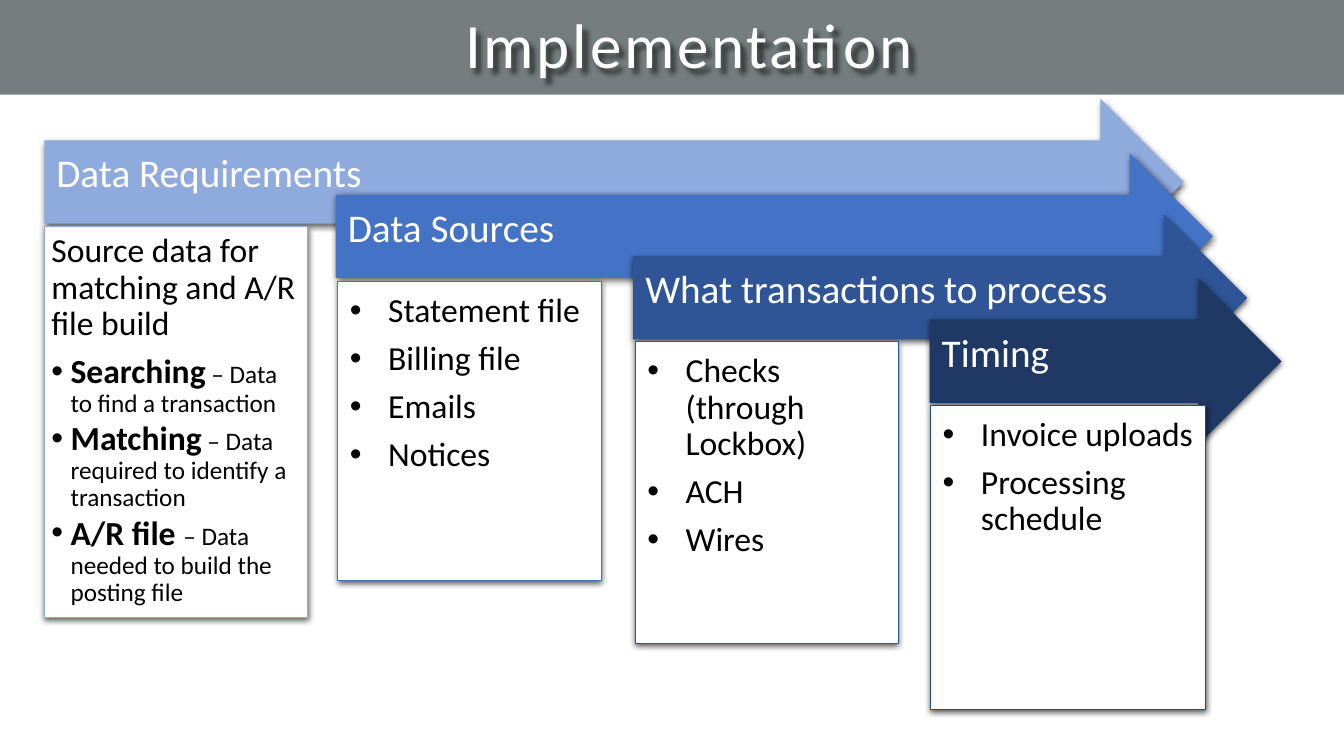
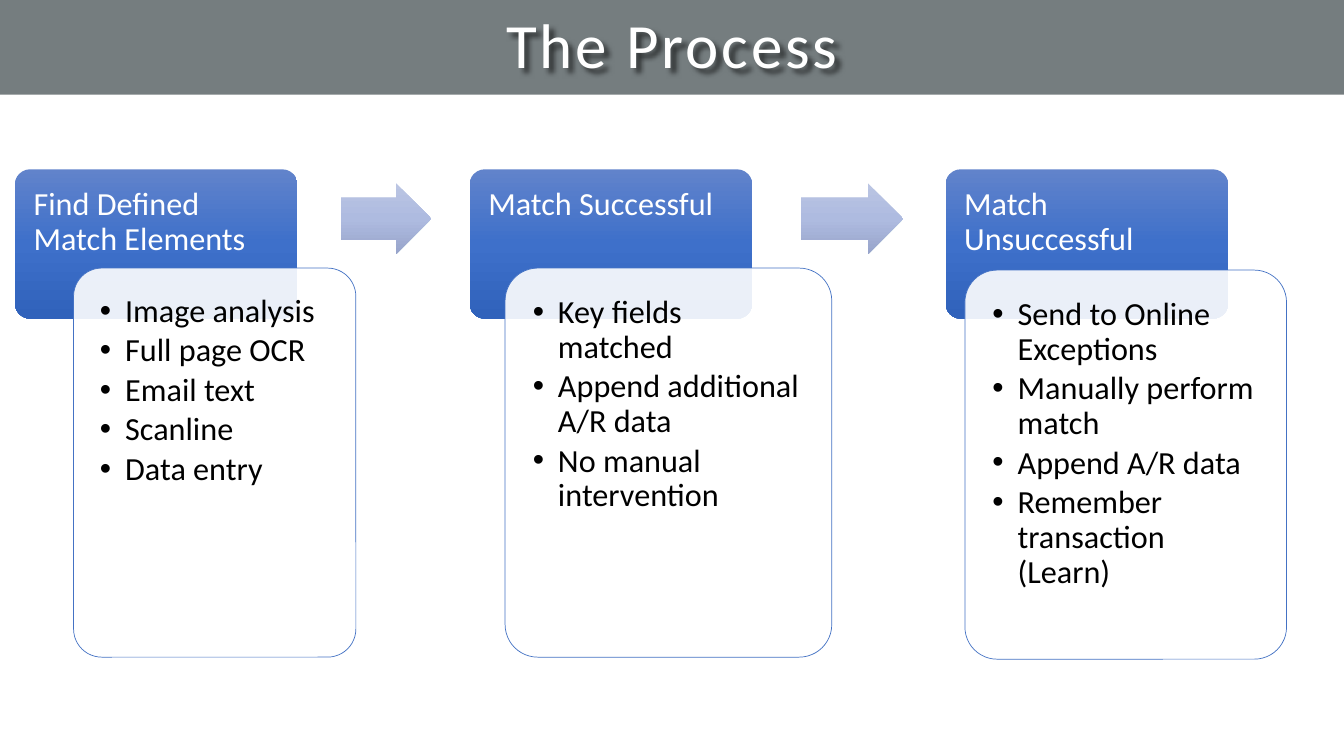
from copy import deepcopy

from lxml.etree import SubElement
from pptx import Presentation
from pptx.dml.color import RGBColor
from pptx.enum.shapes import MSO_SHAPE as SHAPE
from pptx.enum.text import MSO_ANCHOR as ANCHOR, MSO_AUTO_SIZE as AUTO_SIZE, PP_ALIGN as ALIGN
from pptx.oxml.ns import qn
from pptx.util import Pt

PX = 9144  # 100 px to the inch
FONT = "Calibri"
WIDTH, HEIGHT = 1333, 750
COLORS = {
    "band": "757D7F", "white": "FFFFFF", "black": "000000",
    "light": "8FAADC", "blue": "4472C4", "deep": "2F5597",
    "navy": "203864", "navy line": "1F4E79",
}
STEP_GRADIENT = ["6183CB", "3E70CA", "3062BB"]
ARROW_GRADIENT = ["BBC5E3", "AEBBE0", "98A4CB"]
BOX_SHADOW = {"blur": 4.5, "dist": 1.5, "angle": 90, "alpha": 63}
TITLE_SHADOW = {"blur": 4, "dist": 4, "angle": 45, "alpha": 60}


def add_box(slide, kind, box, fill, line=None, shadow=None):
    """Add a preset shape; a list as fill makes a vertical gradient."""
    shape = slide.shapes.add_shape(kind, *[n * PX for n in box])
    if isinstance(fill, list):
        shape.fill.gradient()
        shape.fill.gradient_angle = 270
        stops = shape._element.spPr.find(".//" + qn("a:gsLst"))
        stops.insert(1, deepcopy(stops[0]))
        for i, (stop, color) in enumerate(zip(shape.fill.gradient_stops, fill)):
            stop.position = i / 2
            stop.color.rgb = RGBColor.from_string(color)
    else:
        shape.fill.solid()
        shape.fill.fore_color.rgb = RGBColor.from_string(COLORS[fill])
    if line:
        shape.line.color.rgb = RGBColor.from_string(COLORS[line])
        shape.line.width = Pt(0.5)
    else:
        shape.line.fill.background()
    shape.shadow.inherit = False
    return shape


def write(shape, paragraphs, color, insets, size, after, indent=0, anchor=ANCHOR.TOP):
    """Fill a shape with paragraphs, each a string or a list of (text, size, bold)."""
    frame = shape.text_frame
    frame.word_wrap = True
    frame.vertical_anchor = anchor
    for side, inset in zip(("left", "top", "right", "bottom"), insets):
        setattr(frame, f"margin_{side}", inset * PX)
    for i, content in enumerate(paragraphs):
        runs = [(content, size, False)] if isinstance(content, str) else content
        paragraph = frame.paragraphs[0] if i == 0 else frame.add_paragraph()
        bulleted = indent and not (isinstance(content, str) and content.startswith("Source data"))
        if bulleted:
            props = paragraph._p.get_or_add_pPr()
            props.set("marL", str(indent * PX))
            props.set("indent", str(-indent * PX))
            SubElement(props, qn("a:buFont"), typeface="Arial")
            SubElement(props, qn("a:buChar"), char="•")
        paragraph.alignment = ALIGN.LEFT
        paragraph.line_spacing = 0.9
        share = 0.15 if len(runs) > 1 else after
        paragraph.space_after = Pt(round(share * runs[-1][1], 1))
        for text, points, bold in runs:
            run = paragraph.add_run()
            run.text = text
            font = {"name": FONT, "size": Pt(points), "bold": bold}
            for key, value in font.items():
                setattr(run.font, key, value)
            run.font.color.rgb = RGBColor.from_string(COLORS[color])


prs = Presentation()
prs.slide_width, prs.slide_height = WIDTH * PX, HEIGHT * PX
layout = prs.slide_layouts[5]
implementation = prs.slides.add_slide(layout)
process = prs.slides.add_slide(layout)
shadowed = []

# Grey band, shared through the layout
band = add_box(implementation, SHAPE.RECTANGLE, (0, 0, WIDTH, 94), "band")
band._element.nvSpPr.cNvPr.set("id", "20")
layout.shapes.element.insert(2, band._element)

# Titles
for slide, heading, left in ((implementation, "Implementation", 17), (process, "The Process", 0)):
    title = slide.shapes.title
    title.left, title.top, title.width, title.height = left * PX, 0, WIDTH * PX, 86 * PX
    title.text_frame.text = heading
    title.text_frame.auto_size = AUTO_SIZE.NONE
    title.text_frame.vertical_anchor = ANCHOR.TOP
    paragraph = title.text_frame.paragraphs[0]
    paragraph.alignment = ALIGN.CENTER
    run = paragraph.runs[0]
    for key, value in {"name": FONT, "size": Pt(45)}.items():
        setattr(run.font, key, value)
    run.font.color.rgb = RGBColor.from_string(COLORS["white"])
    run._r.get_or_add_rPr().set("spc", "200")
    title.shadow.inherit = False
    shadowed.append((title, TITLE_SHADOW))

# Implementation: overlapping arrows, each with a card below
ARROW_HEIGHT = 165
stages = [
    ("Data Requirements", "light", "light", (44, 98, 1130), (44, 225, 261, 388), 7, 19, [
        "Source data for matching and A/R file build",
        [("Searching", 24, True), (" – Data to find a transaction", 18, False)],
        [("Matching", 24, True), (" – Data required to identify a transaction", 18, False)],
        [("A/R file ", 24, True), ("– Data needed to build the posting file", 18, False)],
    ]),
    ("Data Sources", "blue", "blue", (333, 152, 870), (335, 279, 261, 297), 12, 38,
     ["Statement file", "Billing file", "Emails", "Notices"]),
    ("What transactions to process", "deep", "deep", (628, 213, 609), (630, 339, 261, 299), 12, 38,
     ["Checks (through Lockbox)", "ACH", "Wires"]),
    ("Timing", "navy", "navy line", (922, 276, 349), (923, 402, 273, 302), 12, 38,
     ["Invoice uploads", "Processing schedule"]),
]
for name, fill, outline, arrow_box, card_box, inset, indent, details in stages:
    arrow = add_box(implementation, SHAPE.RIGHT_ARROW, (*arrow_box, ARROW_HEIGHT), fill)
    write(arrow, [name], "white", (12, 12, 0, 26), 28, 0, anchor=ANCHOR.MIDDLE)
    card = add_box(implementation, SHAPE.RECTANGLE, card_box, "white", outline)
    write(card, details, "black", [inset] * 4, 24, 0.35, indent)
    shadowed += [(arrow, BOX_SHADOW), (card, BOX_SHADOW)]

# The Process: step headers with cards, arrows between them
steps = [
    ("Find Defined Match Elements", 15, (73, 266, 280, 386), (338, 90),
     ["Image analysis", "Full page OCR", "Email text", "Scanline", "Data entry"]),
    ("Match Successful", 466, (501, 266, 324, 386), (794, 102),
     ["Key fields matched", "Append additional A/R data", "No manual intervention"]),
    ("Match Unsuccessful", 938, (957, 268, 319, 386), None,
     ["Send to Online Exceptions", "Manually perform match", "Append A/R data",
      "Remember transaction (Learn)"]),
]
for name, left, card_box, arrow_span, details in steps:
    header = add_box(process, SHAPE.ROUNDED_RECTANGLE, (left, 168, 280, 148), STEP_GRADIENT)
    header.adjustments[0] = 0.1
    write(header, [name], "white", (14, 14, 14, 56), 23, 0)
    card = add_box(process, SHAPE.ROUNDED_RECTANGLE, card_box, "white", "blue")
    card.adjustments[0] = 0.1
    tint = card._element.spPr.find(qn("a:solidFill")).find(qn("a:srgbClr"))
    SubElement(tint, qn("a:alpha"), val="90000")
    write(card, details, "black", [18] * 4, 23, 0.15, 25)
    if arrow_span:
        arrow_left, arrow_width = arrow_span
        arrow = add_box(process, SHAPE.RIGHT_ARROW, (arrow_left, 182, arrow_width, 70), ARROW_GRADIENT)
        arrow.adjustments[0] = 0.6

# Soft shadows
for shape, shadow in shadowed:
    effects = shape._element.spPr.find(qn("a:effectLst"))
    outer = SubElement(effects, qn("a:outerShdw"), blurRad=str(Pt(shadow["blur"])),
                       dist=str(Pt(shadow["dist"])), dir=str(shadow["angle"] * 60000),
                       algn="ctr", rotWithShape="0")
    shade = SubElement(outer, qn("a:srgbClr"), val=COLORS["black"])
    SubElement(shade, qn("a:alpha"), val=str(shadow["alpha"] * 1000))

prs.save("out.pptx")
